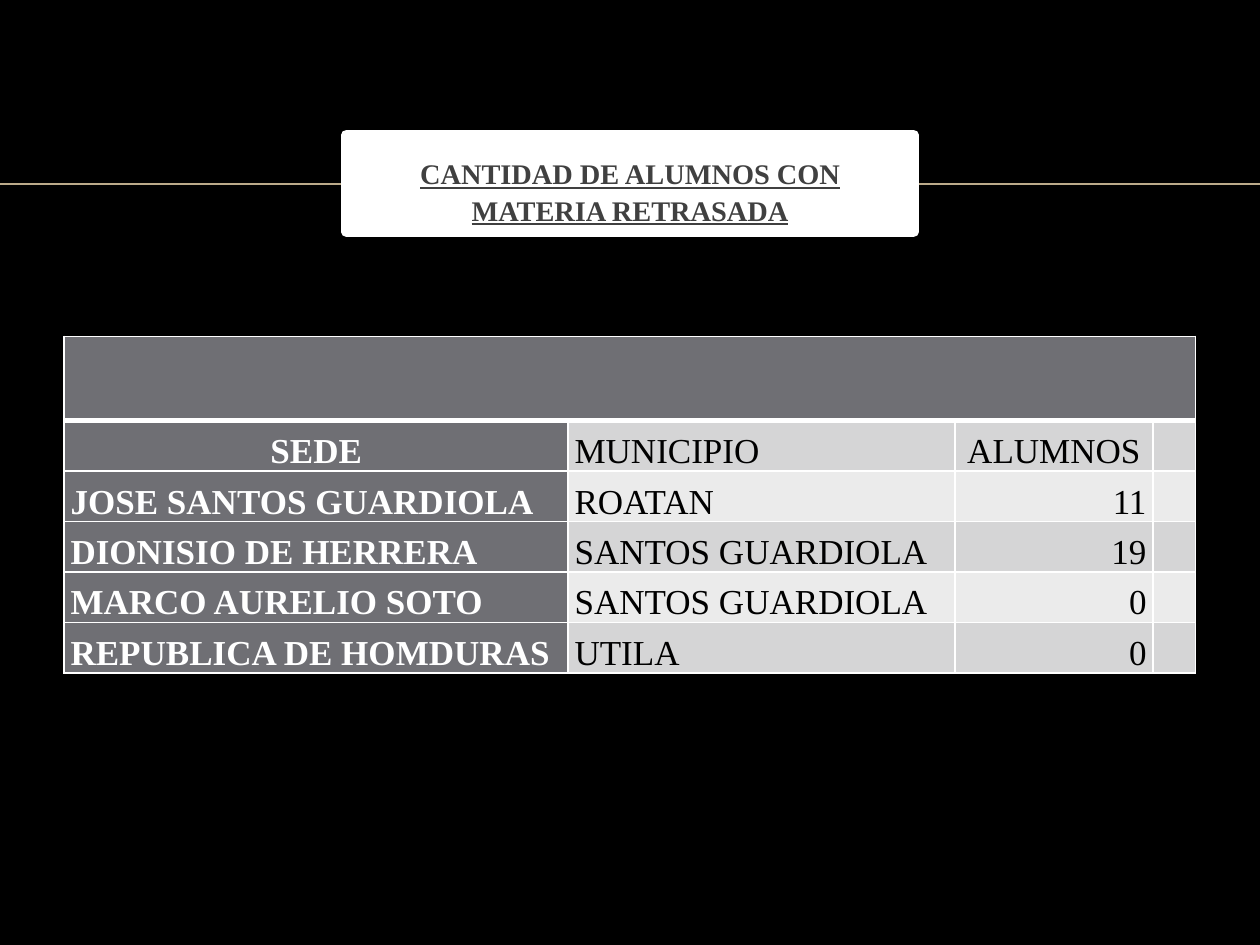
import pptx
import pptx.util
import pptx.dml.color
import pptx.enum.shapes
import pptx.enum.text
import pptx.oxml
import pptx.oxml.ns

Inches = pptx.util.Inches
Pt = pptx.util.Pt
ALIGN = pptx.enum.text.PP_ALIGN
ANCHOR = pptx.enum.text.MSO_ANCHOR

COLORS = {
    "black": "000000",
    "white": "FFFFFF",
    "rule": "BBAA8A",
    "title": "404040",
    "head": "6F6F74",
    "band_dark": "D5D5D6",
    "band_light": "EBEBEB",
}
COL_WIDTHS = [4, 3.07, 1.57, 0.34]
HEADER_HEIGHT, ROW_HEIGHT = 0.67, 0.4
ROWS = [
    ("SEDE", "MUNICIPIO", "ALUMNOS", ""),
    ("JOSE SANTOS GUARDIOLA", "ROATAN", "\u00a011".strip(), ""),
    ("DIONISIO DE HERRERA", "SANTOS GUARDIOLA", "19", ""),
    ("MARCO AURELIO SOTO", "SANTOS GUARDIOLA", "0", ""),
    ("REPUBLICA DE HOMDURAS", "UTILA", "0", ""),
]


class SlideBuilder:
    font = "Times New Roman"

    def __init__(self, slide):
        self.s = slide

    def rgb(self, name):
        return pptx.dml.color.RGBColor.from_string(COLORS[name])

    def background(self, color):
        fill = self.s.background.fill
        fill.solid()
        fill.fore_color.rgb = self.rgb(color)

    def style(self, p, size, color, bold, align):
        p.alignment = align
        p.line_spacing = 1.07
        p.font.name = self.font
        p.font.size = Pt(size)
        p.font.bold = bold
        p.font.color.rgb = self.rgb(color)

    def line(self, x1, y1, x2, y2, color, width):
        c = self.s.shapes.add_connector(
            pptx.enum.shapes.MSO_CONNECTOR.STRAIGHT,
            Inches(x1), Inches(y1), Inches(x2), Inches(y2))
        c.line.color.rgb = self.rgb(color)
        c.line.width = Pt(width)
        c._element.spPr.append(pptx.oxml.parse_xml(
            f"<a:effectLst {pptx.oxml.ns.nsdecls('a')}/>"))

    def title_box(self, x, y, w, h, text):
        sp = self.s.shapes.add_shape(
            pptx.enum.shapes.MSO_SHAPE.RECTANGLE,
            Inches(x), Inches(y), Inches(w), Inches(h))
        sp.shadow.inherit = False
        sp.fill.solid()
        sp.fill.fore_color.rgb = self.rgb("white")
        sp.line.color.rgb = self.rgb("white")
        sp.line.width = Pt(6)
        tf = sp.text_frame
        tf.word_wrap = True
        tf.vertical_anchor = ANCHOR.BOTTOM
        tf.margin_left = tf.margin_right = Inches(0.25)
        tf.margin_top = 0
        tf.margin_bottom = Inches(0.04)
        p = tf.paragraphs[0]
        p.text = text
        self.style(p, 16.2, "title", True, ALIGN.CENTER)
        p.font.underline = True

    def borders(self, cell, top=1, bottom=1):
        """Draw white borders; widths are in points."""
        tc_pr = cell._tc.get_or_add_tcPr()
        widths = {"lnL": 1, "lnR": 1, "lnT": top, "lnB": bottom}
        for i, (tag, width) in enumerate(widths.items()):
            tc_pr.insert(i, pptx.oxml.parse_xml(
                f'<a:{tag} {pptx.oxml.ns.nsdecls("a")} w="{Pt(width)}">'
                f'<a:solidFill><a:srgbClr val="{COLORS["white"]}"/></a:solidFill>'
                f'</a:{tag}>'))

    def cell(self, cell, text, fill, color, bold, align, **border_widths):
        cell.fill.solid()
        cell.fill.fore_color.rgb = self.rgb(fill)
        cell.vertical_anchor = ANCHOR.BOTTOM
        cell.margin_left = cell.margin_right = Inches(0.05)
        cell.margin_top = cell.margin_bottom = 0
        p = cell.text_frame.paragraphs[0]
        p.text = text
        self.style(p, 20, color, bold, align)
        self.borders(cell, **border_widths)

    def table(self, x, y, col_widths, rows):
        """Add a table with a merged empty header above the given rows."""
        height = HEADER_HEIGHT + ROW_HEIGHT * len(rows)
        table = self.s.shapes.add_table(
            len(rows) + 1, len(col_widths), Inches(x), Inches(y),
            Inches(sum(col_widths)), Inches(height)).table
        for col, width in zip(table.columns, col_widths):
            col.width = Inches(width)
        for i, row in enumerate(table.rows):
            row.height = Inches(ROW_HEIGHT if i else HEADER_HEIGHT)

        last = len(col_widths) - 1
        for c in range(last + 1):
            self.cell(table.cell(0, c), "", "head", "white", True,
                      ALIGN.LEFT, bottom=3)
        table.cell(0, 0).merge(table.cell(0, last))

        for r, row in enumerate(rows, start=1):
            band = "band_dark" if r % 2 else "band_light"
            for c, text in enumerate(row):
                is_name = c == 0
                if r == 1 and c in (0, 2):
                    align = ALIGN.CENTER
                else:
                    align = ALIGN.RIGHT if c == 2 else ALIGN.LEFT
                self.cell(table.cell(r, c), text,
                          "head" if is_name else band,
                          "white" if is_name else "black",
                          is_name, align, top=3 if r == 1 else 1)


def main():
    prs = pptx.Presentation()
    prs.slide_width, prs.slide_height = Inches(10), Inches(7.5)
    b = SlideBuilder(prs.slides.add_slide(prs.slide_layouts[6]))
    b.background("black")
    b.line(0, 1.46, 10, 1.46, "rule", 1)
    b.title_box(2.75, 1.07, 4.5, 0.77,
                "CANTIDAD DE ALUMNOS CON MATERIA RETRASADA")
    b.table(0.51, 2.67, COL_WIDTHS, ROWS)
    prs.save("out.pptx")


if __name__ == "__main__":
    main()
